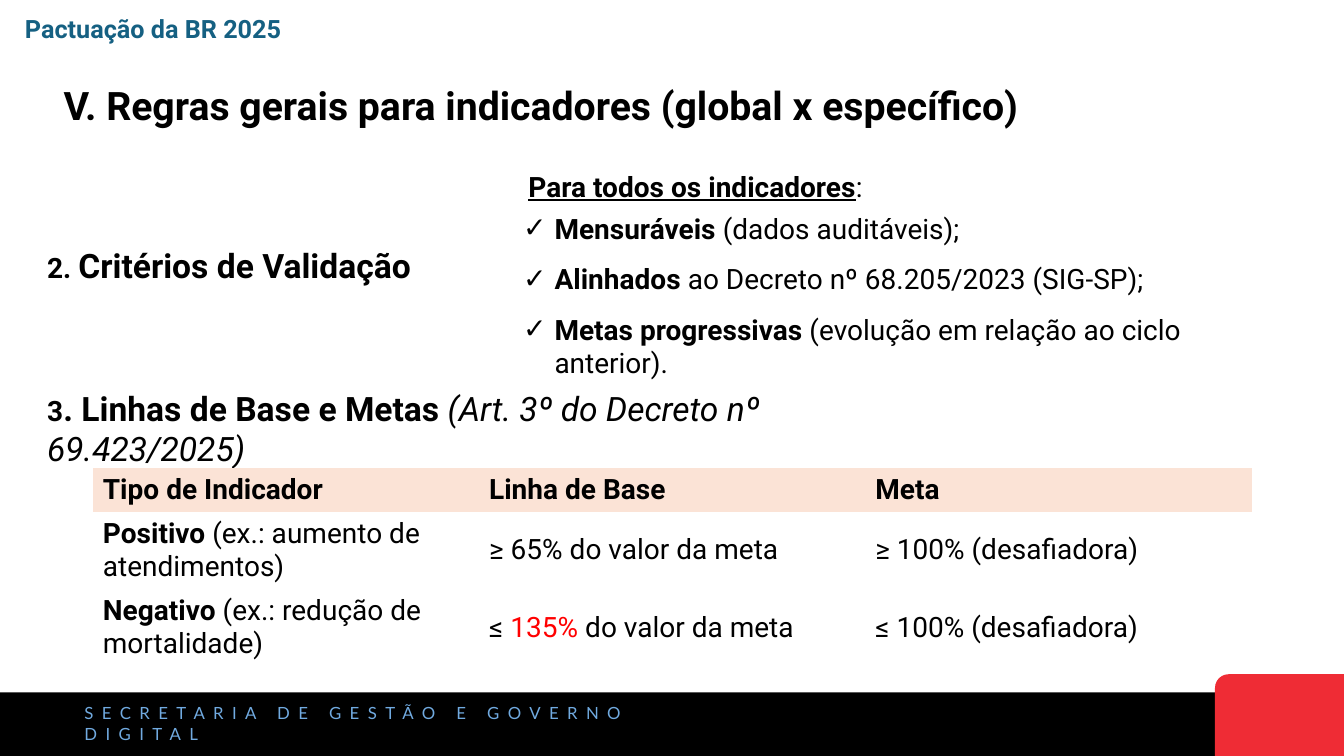
from lxml.etree import SubElement
from pptx import Presentation
from pptx.dml.color import RGBColor
from pptx.enum.shapes import MSO_SHAPE as Shape
from pptx.enum.text import MSO_ANCHOR as Anchor, MSO_AUTO_SIZE as AutoSize, PP_ALIGN as Align
from pptx.oxml.ns import qn
from pptx.util import Cm, Pt

COLOURS = {"black": "000000", "red": "EF2C35", "footer": "71AAE0",
           "heading": "156082", "header": "FBE3D6", "alert": "FF0000"}
BOLD = {"bold": True}


def colour(name):
    return RGBColor.from_string(COLOURS[name])


def write(paragraph, *parts, size=20, font="Roboto", ink="black", spacing=0,
          before=0, after=0, left=0, hanging=0, bullet=None, line=1.0):
    """Each part is a string or a (string, format overrides) pair."""
    props = paragraph._p.get_or_add_pPr()
    props.set("marL", str(Cm(left)))
    props.set("indent", str(-Cm(hanging)))
    if bullet:
        SubElement(props, qn("a:buChar")).set("char", bullet)
    else:
        SubElement(props, qn("a:buNone"))
    paragraph.alignment = Align.LEFT
    paragraph.line_spacing = line
    paragraph.space_before, paragraph.space_after = Pt(before), Pt(after)
    for part in parts:
        words, style = (part, {}) if isinstance(part, str) else part
        run = paragraph.add_run()
        run.text = words
        run.font.name = font
        run.font.size = Pt(style.get("size", size))
        run.font.bold = style.get("bold", False)
        run.font.italic = style.get("italic", False)
        run.font.underline = style.get("underline", False)
        run.font.color.rgb = colour(style.get("ink", ink))
        if spacing:
            run._r.get_or_add_rPr().set("spc", str(spacing * 100))


def place(holder, box):
    holder.left, holder.top, holder.width, holder.height = map(Cm, box)
    frame = holder.text_frame
    frame.word_wrap = True
    frame.auto_size = AutoSize.NONE
    return frame


def text_box(slide, box, *parts, anchor=Anchor.TOP, inset=None, **style):
    frame = place(slide.shapes.add_textbox(0, 0, 0, 0), box)
    frame.vertical_anchor = anchor
    if inset is not None:
        frame.margin_left = frame.margin_right = Cm(inset)
        frame.margin_top = frame.margin_bottom = Cm(inset)
    write(frame.paragraphs[0], *parts, **style)


def block(slide, preset, box, fill):
    shape = slide.shapes.add_shape(preset, *map(Cm, box))
    shape.shadow.inherit = False
    shape.fill.solid()
    shape.fill.fore_color.rgb = colour(fill)
    shape.line.fill.background()
    return shape


def footer(slide, left, top, width, height):
    block(slide, Shape.RECTANGLE, (left, top, width, height), "black")
    corner = block(slide, Shape.ROUND_1_RECTANGLE,
                   (left + width - 3.28, top - 0.46, 3.28, height + 0.46), "red")
    corner._element.spPr.get_or_add_xfrm().set("flipH", "1")
    text_box(slide, (left + 1.98, top + 0.38, 16.66, 0.79),
             "SECRETARIA DE GESTÃO E GOVERNO DIGITAL", anchor=Anchor.MIDDLE,
             inset=0.15, size=12, font="Lato", ink="footer", spacing=6)


def headings(slide, left, top, width):
    text_box(slide, (left, top, 16.94, 1.02), ("Pactuação da BR 2025", BOLD),
             size=18, ink="heading")
    frame = place(slide.shapes.title, (left + 0.97, top + 1.5, width, 2.03))
    frame.vertical_anchor = Anchor.MIDDLE
    write(frame.paragraphs[0],
          ("V. Regras gerais para indicadores (global x específico)", BOLD),
          size=28, line=0.9)


def criteria(slide, left, top, width, height):
    text_box(slide, (left, top + 1.9, 17.93, 1.27), ("2. ", BOLD),
             ("Critérios de Validação", {"bold": True, "size": 24}))
    # Checklist in the body placeholder
    frame = place(slide.placeholders[1],
                  (left + 11.99, top, width - 11.99, height))
    frame.vertical_anchor = Anchor.TOP
    write(frame.paragraphs[0],
          ("Para todos os indicadores", {"bold": True, "underline": True}), ":",
          left=0.13)
    for term, detail in [
            ("Mensuráveis", " (dados auditáveis);"),
            ("Alinhados", " ao Decreto nº 68.205/2023 (SIG-SP);"),
            ("Metas progressivas", " (evolução em relação ao ciclo anterior).")]:
        write(frame.add_paragraph(), (term, BOLD), detail, before=6, after=6,
              left=0.79, hanging=0.79, bullet="✓")


def targets(slide, left, top, width):
    text_box(slide, (left, top, 23.29, 1.27), ("3", BOLD),
             (". Linhas de Base e Metas ", {"bold": True, "size": 24}),
             ("(Art. 3º do Decreto nº 69.423/2025)", {"italic": True, "size": 24}),
             anchor=Anchor.MIDDLE)
    # Baseline and target table
    rows = [
        [[("Tipo de Indicador", BOLD)], [("Linha de Base", BOLD)], [("Meta", BOLD)]],
        [[("Positivo", BOLD), " (ex.: aumento de atendimentos)"],
         ["≥ 65% do valor da meta"], ["≥ 100% (desafiadora)"]],
        [[("Negativo", BOLD), " (ex.: redução de mortalidade)"],
         ["≤ ", ("135%", {"ink": "alert"}), " do valor da meta"],
         ["≤ 100% (desafiadora)"]],
    ]
    heights = [1.1, 1.95, 1.95]
    table = slide.shapes.add_table(
        len(rows), 3, Cm(left + 1.4), Cm(top + 1.63),
        Cm(width), Cm(sum(heights))).table
    table.first_row = table.horz_banding = False
    # Style without grid lines
    table._tbl.tblPr.find(qn("a:tableStyleId")).text = \
        "{2D5ABB26-0587-4C30-8999-92F81FD0307C}"
    for r, (row, height) in enumerate(zip(rows, heights)):
        table.rows[r].height = Cm(height)
        for c, parts in enumerate(row):
            cell = table.cell(r, c)
            cell.vertical_anchor = Anchor.MIDDLE
            if r == 0:
                cell.fill.solid()
                cell.fill.fore_color.rgb = colour("header")
            else:
                cell.fill.background()
            write(cell.text_frame.paragraphs[0], *parts)


def main():
    deck = Presentation()
    deck.slide_width, deck.slide_height = Cm(33.87), Cm(19.05)
    slide = deck.slides.add_slide(deck.slide_layouts[1])
    footer(slide, 0, 17.45, 33.9, 1.6)
    headings(slide, 0.38, 0.2, 32.5)
    criteria(slide, 0.94, 4.14, 31.98, 5.59)
    targets(slide, 0.94, 10.16, 29.2)
    deck.save("out.pptx")


if __name__ == "__main__":
    main()
